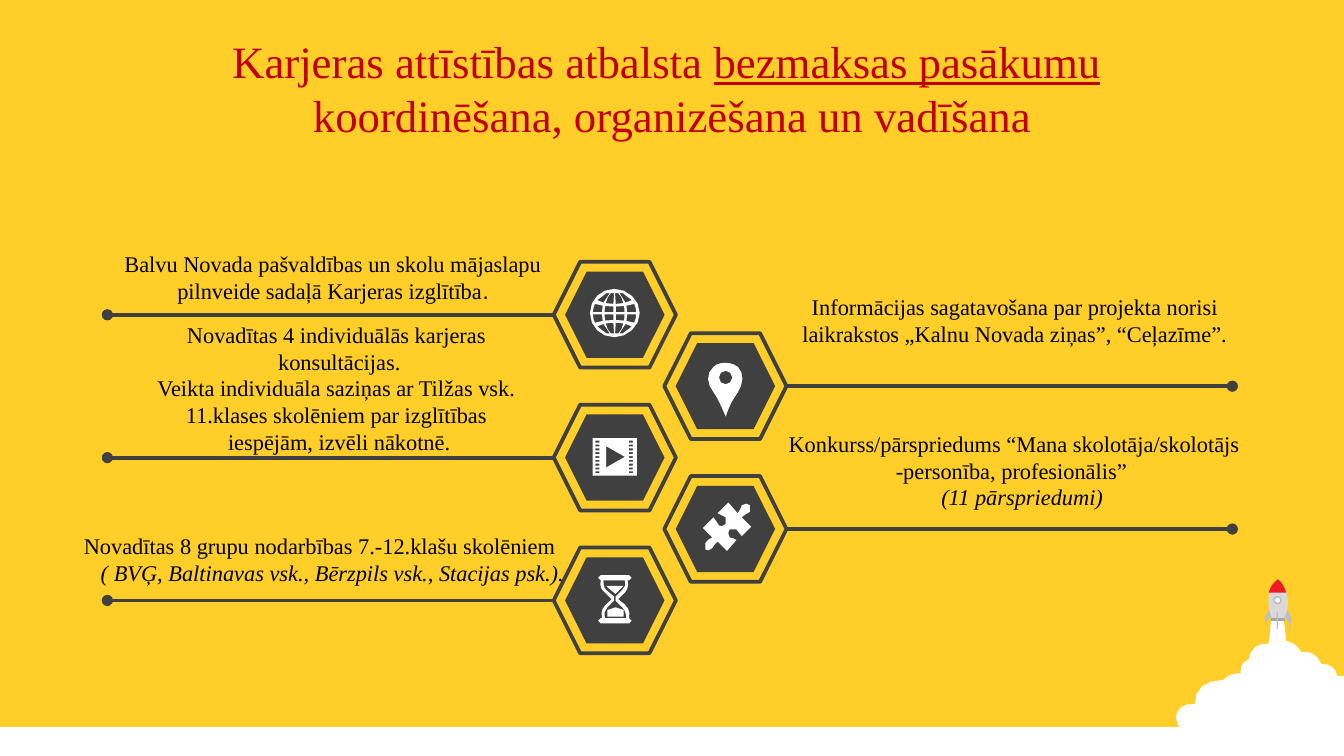
from lxml import etree
from pptx import Presentation
from pptx.dml.color import RGBColor
from pptx.enum.shapes import MSO_CONNECTOR, MSO_SHAPE
from pptx.enum.text import MSO_ANCHOR, PP_ALIGN
from pptx.oxml.ns import qn
from pptx.util import Cm, Pt

HEXAGON, OVAL, RECTANGLE = MSO_SHAPE.HEXAGON, MSO_SHAPE.OVAL, MSO_SHAPE.RECTANGLE
STRAIGHT = MSO_CONNECTOR.STRAIGHT
TOP, MIDDLE = MSO_ANCHOR.TOP, MSO_ANCHOR.MIDDLE
CENTER = PP_ALIGN.CENTER


class Theme:
    yellow = RGBColor.from_string("FFCE29")
    dark = RGBColor.from_string("404040")
    white = RGBColor.from_string("FFFFFF")
    black = RGBColor.from_string("000000")
    crimson = RGBColor.from_string("C00000")
    red = RGBColor.from_string("ED1C24")
    pale = RGBColor.from_string("D9D9D9")
    silver = RGBColor.from_string("BFBFBF")
    steel = RGBColor.from_string("A6A6A6")
    serif = "Times New Roman"
    sans = "Arial"
    title = Pt(24)
    body = Pt(12)


deck = Presentation()
deck.slide_width, deck.slide_height = Cm(25.4), Cm(14.29)
page = deck.slides.add_slide(deck.slide_layouts[6])
page.background.fill.solid()
page.background.fill.fore_color.rgb = Theme.yellow


def preset(kind, left, top, width, height, fill, line=None, weight=0):
    shape = page.shapes.add_shape(kind, Cm(left), Cm(top), Cm(width), Cm(height))
    shape.shadow.inherit = False
    shape.fill.solid()
    shape.fill.fore_color.rgb = fill
    if line is None:
        shape.line.fill.background()
    else:
        shape.line.color.rgb = line
        shape.line.width = Pt(weight)


def outline(path, fill, unit=0.0254):
    contours, pending, mode = [], [], "M"
    for token in path.split():
        if token in "MLC":
            mode = token
            if mode == "M":
                contours.append([])
            continue
        pending.append(float(token))
        if len(pending) < (6 if mode == "C" else 2):
            continue
        if mode == "C":
            x0, y0 = contours[-1][-1]
            x1, y1, x2, y2, x3, y3 = pending
            steps = max(1, min(4, round((abs(x3 - x0) + abs(y3 - y0)) / 4)))
            for step in range(1, steps + 1):
                t = step / steps
                a, b, c, d = (1 - t) ** 3, 3 * t * (1 - t) ** 2, 3 * t * t * (1 - t), t ** 3
                contours[-1].append((a * x0 + b * x1 + c * x2 + d * x3,
                                     a * y0 + b * y1 + c * y2 + d * y3))
        else:
            contours[-1].append(tuple(pending))
        pending = []
    contours = [[(Cm(x * unit), Cm(y * unit)) for x, y in contour] for contour in contours]
    builder = page.shapes.build_freeform(*contours[0][0], scale=1.0)
    for index, contour in enumerate(contours):
        if index:
            builder.move_to(*contour[0])
        builder.add_line_segments(contour[1:], close=True)
    shape = builder.convert_to_shape()
    shape.shadow.inherit = False
    shape.fill.solid()
    shape.fill.fore_color.rgb = fill
    shape.line.fill.background()


preset(RECTANGLE, 0, 13.74, 25.4, 0.55, Theme.white)
cloud = """M 946 459 L 955 459 957 477 C 962 478 965 480 968 485
C 975 484 981 488 983 494 990 494 994 497 995 503 L 1000 503 1000 560 875 560 886 545
C 880 545 875 540 875 534 875 528 880 523 889 524
889 513 896 506 910 506 C 914 502 918 501 923 501 923 495 925 492 929 491
930 483 936 478 944 479"""
outline(cloud, Theme.white)
outline("M 946 462 C 944 453 940 440 951 431 962 441 958 454 956 462", Theme.pale)
outline("M 946 460 L 956 460 956 462 946 462", Theme.steel)
outline("M 951 431 C 954 434 956 437 957 441 L 944 441 C 945 437 947 434 951 431", Theme.red)
preset(OVAL, 24.08, 11.28, 0.13, 0.13, Theme.white, Theme.silver, 1)
preset(RECTANGLE, 24.13, 11.56, 0.02, 0.33, Theme.silver)
outline("M 944 454 L 946 459 942 463 942 468 941 460", Theme.silver)
outline("M 958 454 L 956 459 959 463 960 468 961 460", Theme.silver)

first_row, row_step = 5.95, 1.35
for row in range(5):
    middle = first_row + row * row_step
    right_side = row % 2 == 1
    center = 13.71 if right_side else 11.62
    preset(HEXAGON, center - 1.155, middle - 1, 2.31, 2, Theme.yellow, Theme.dark, 2)
    preset(HEXAGON, center - 0.94, middle - 0.815, 1.88, 1.63, Theme.dark)
    start, end = (14.88, 23.29) if right_side else (10.46, 2.03)
    line = page.shapes.add_connector(STRAIGHT, Cm(start), Cm(middle), Cm(end), Cm(middle))
    line.line.color.rgb = Theme.dark
    line.line.width = Pt(2)
    etree.SubElement(line.line._get_or_add_ln(), qn("a:tailEnd"), type="oval")
    etree.SubElement(line._element.spPr, qn("a:effectLst"))

globe = "M 439 233 C 439 223 447 215 457 215 467 215 476 223 476 233 476 243 467 251 457 251 447 251 439 243 439 233"
for side_x in (-1, 1):
    for side_y in (-1, 1):
        for inner, outer in ((0.06, 0.46), (0.58, 1)):
            for low, high in ((0.9, 5), (7, 15)):
                corners = [(inner, low), (outer, low), (outer, (low + high) / 2),
                           (outer, high), (inner, high)]
                globe += " M"
                for across, level in corners:
                    sag = 0.4 if 2 < level < 14 else 0
                    rise = min(level * (1 + sag * across ** 2), 15)
                    reach = across * (16.2 ** 2 - rise ** 2) ** 0.5
                    globe += f" {457.3 + side_x * reach} {233.2 + side_y * rise}"
outline(globe, Theme.white)

film = "M 441 326 L 474 326 474 354 441 354 M 451 332 L 451 348 465 340"
for left in (443, 468):
    for hole in range(9):
        top = 328 + hole * 2.85
        film += f" M {left} {top} L {left + 3} {top} {left + 3} {top + 1.4} {left} {top + 1.4}"
outline(film, Theme.white)

pin = """M 540 270 C 543 270 546 271 549 273 554 278 553 286 549 292 545 298 543 301 540 310
536 301 535 298 531 292 526 286 525 278 531 273 533 271 536 270 540 270
M 540 276 C 537 276 535 278 535 281 535 284 537 286 540 286 542 286 545 284 545 281
545 278 542 276 540 276"""
outline(pin, Theme.white)

puzzle = """M 558 376 C 559 377 559 379 558 381 556 383 554 382 552 385 L 559 392 552 399
C 549 397 550 395 548 394 547 392 544 393 543 394 542 395 541 398 543 400
545 401 546 400 548 402 L 541 410 534 403 C 531 405 532 406 530 408 528 410 526 410 525 409
524 407 523 405 525 404 526 401 528 402 530 400 L 523 393 531 385
C 534 387 532 389 535 391 536 392 538 392 540 390 541 389 541 387 540 385 537 383 537 384 534 382
L 542 374 549 382 C 552 379 550 379 552 376 554 374 557 375 558 376"""
outline(puzzle, Theme.white)

hourglass = """M 447 428 L 468 428 470 430 468 432 467 432
C 468 435 467 439 465 441 L 460 446 465 450 C 468 453 469 456 468 460
L 470 462 468 464 447 464 445 462 447 460 448 460
C 447 456 448 453 450 451 L 455 446 450 441 C 447 439 446 435 447 432 L 445 430
M 449 432 C 449 435 449 438 452 440 L 457 444 457 447 452 452 C 450 454 449 457 450 460
L 466 460 C 466 457 465 454 463 452 L 458 447 458 444 463 439 C 465 437 466 435 465 432
M 451 436 L 464 436 462 438 458 442 453 438
M 458 452 L 464 454 464 459 452 459 452 454"""
outline(hourglass, Theme.white)

texts = [
    (0, 0.36, 25.4, 2.59, MIDDLE, Theme.title, Theme.crimson, [
        (0, [("Karjeras attīstības atbalsta ", ""), ("bezmaksas pasākumu", "underline"), (" ", ""),
             ("\n", ""), ("koordinēšana, organizēšana un vadīšana", "")])]),
    (2.08, 4.6, 8.43, 1.8, TOP, Theme.body, Theme.black, [
        (0, [("Balvu Novada pašvaldības un skolu mājaslapu pilnveide sadaļā Karjeras izglītība", ""),
             (".", "sans")])]),
    (2.54, 5.94, 7.75, 2.82, TOP, Theme.body, Theme.black, [
        (0, [("Novadītas 4 individuālās karjeras ", "")]),
        (0, [("konsultācijas.", "")]),
        (0, [("Veikta individuāla saziņas ar Tilžas vsk. ", "")]),
        (0, [("11.klases skolēniem par izglītības ", "")]),
        (0, [("iespējām, izvēli nākotnē.", "")])]),
    (1.17, 9.93, 9.86, 1.27, TOP, Theme.body, Theme.black, [
        (0, [("Novadītas 8 grupu nodarbības 7.-12.klašu skolēniem ", "")]),
        (0.38, [("( BVĢ, Baltinavas vsk., Bērzpils vsk., Stacijas psk.).", "italic")])]),
    (14.88, 5.41, 8.61, 1.27, TOP, Theme.body, Theme.black, [
        (0, [("Informācijas sagatavošana par projekta norisi laikrakstos "
              "„Kalnu Novada ziņas”, “Ceļazīme”.", "")])]),
    (14.63, 8, 9.08, 1.8, TOP, Theme.body, Theme.black, [
        (0, [("Konkurss/pārspriedums “Mana skolotāja/skolotājs -personība, profesionālis” ", "")]),
        (0.3, [("(11 pārspriedumi)", "italic")])]),
]
for left, top, width, height, anchor, size, colour, paragraphs in texts:
    box = page.shapes.add_textbox(Cm(left), Cm(top), Cm(width), Cm(height))
    frame = box.text_frame
    frame.word_wrap = True
    frame.vertical_anchor = anchor
    for index, (indent, spans) in enumerate(paragraphs):
        para = frame.add_paragraph() if index else frame.paragraphs[0]
        para.alignment = CENTER
        if indent:
            para._p.get_or_add_pPr().set("marL", str(Cm(indent)))
        for words, style in spans:
            if words == "\n":
                para.add_line_break()
                continue
            span = para.add_run()
            span.text = words
            span.font.name = Theme.sans if style == "sans" else Theme.serif
            span.font.size = size
            span.font.color.rgb = colour
            span.font.italic = style == "italic"
            span.font.underline = style == "underline"

deck.save("out.pptx")
